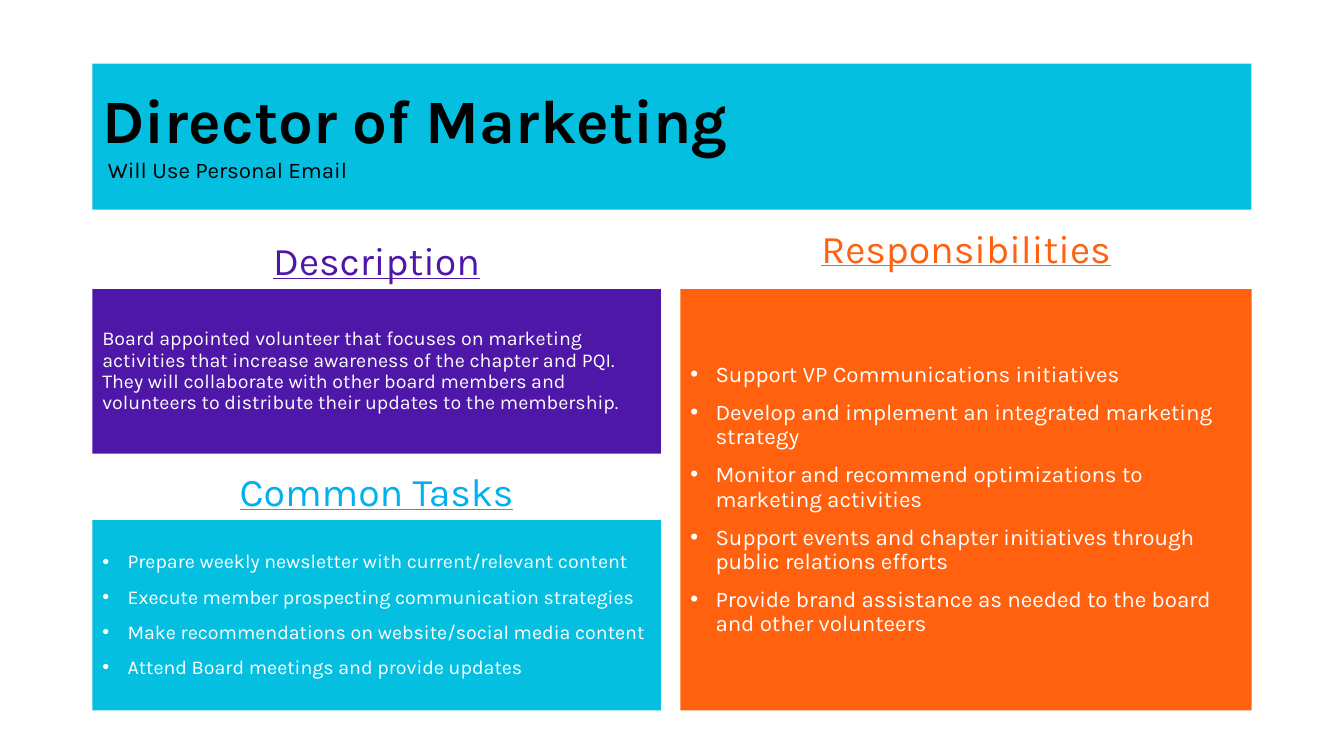
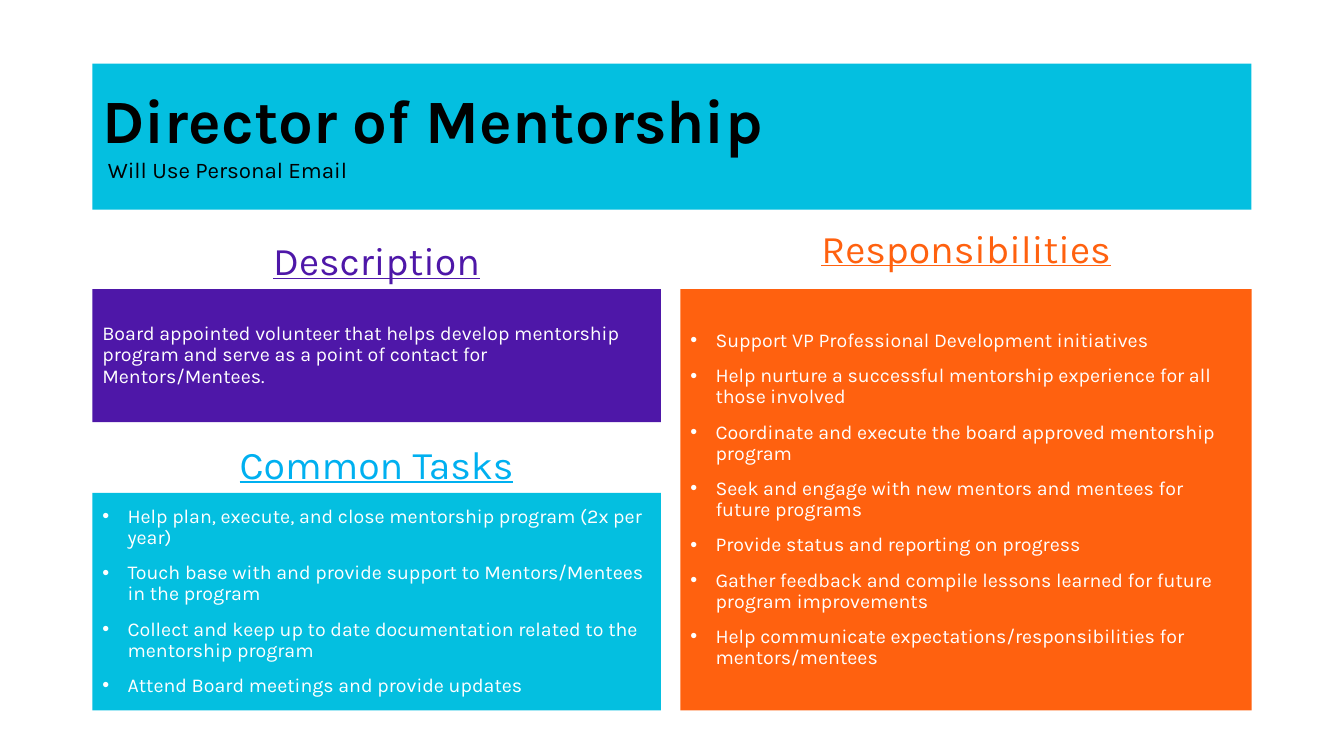
from pptx import Presentation
from pptx.dml.color import RGBColor
from pptx.enum.shapes import MSO_SHAPE
from pptx.enum.text import MSO_ANCHOR, PP_ALIGN
from pptx.util import Pt
from lxml.etree import SubElement
from pptx.oxml.ns import qn

COLORS = {
    "cyan": "04BFE0",
    "sky": "00B0F0",
    "purple": "4E17A8",
    "orange": "FF610F",
    "black": "000000",
    "white": "FFFFFF",
}
FONT = "Karla"
LEFT, WIDE = 66, 828
GAP = 14
LEFT_W, RIGHT_W = 406, 408
RIGHT = LEFT + LEFT_W + GAP
TOP, BOTTOM = 206.5, 507.5
HEAD_H = 46

ROLES = [
    {
        "title": "Director of Marketing",
        "about": "Board appointed volunteer that focuses on marketing activities that "
                 "increase awareness of the chapter and PQI. They will collaborate with "
                 "other board members and volunteers to distribute their updates to the "
                 "membership.",
        "about_h": 117.5,
        "tasks": [
            "Prepare weekly newsletter with current/relevant content",
            "Execute member prospecting communication strategies",
            "Make recommendations on website/social media content",
            "Attend Board meetings and provide updates",
        ],
        "tasks_h": 136,
        "duties": [
            "Support VP Communications initiatives",
            "Develop and implement an integrated marketing strategy",
            "Monitor and recommend optimizations to marketing activities",
            "Support events and chapter initiatives through public relations efforts",
            "Provide brand assistance as needed to the board and other volunteers",
        ],
        "duty_size": 16,
    },
    {
        "title": "Director of Mentorship",
        "about": "Board appointed volunteer that helps develop mentorship program and "
                 "serve as a point of contact for Mentors/Mentees.",
        "about_h": 95,
        "tasks": [
            "Help plan, execute, and close mentorship program (2x per year)",
            "Touch base with and provide support to Mentors/Mentees in the program",
            "Collect and keep up to date documentation related to the mentorship program",
            "Attend Board meetings and provide updates",
        ],
        "tasks_h": 155.5,
        "duties": [
            "Support VP Professional Development initiatives",
            "Help nurture a successful mentorship experience for all those involved",
            "Coordinate and execute the board approved mentorship program",
            "Seek and engage with new mentors and mentees for future programs",
            "Provide status and reporting on progress",
            "Gather feedback and compile lessons learned for future program improvements",
            "Help communicate expectations/responsibilities for mentors/mentees",
        ],
        "duty_size": 14,
    },
]


def style(para, size, color, bold=False, line=0.9):
    para.line_spacing = line
    for run in para.runs:
        font = run.font
        font.name, font.size, font.bold = FONT, Pt(size), bold
        font.color.rgb = RGBColor.from_string(COLORS[color])


def indent(para, left, first=0):
    props = para._p.get_or_add_pPr()
    props.set("marL", str(Pt(left)))
    props.set("indent", str(Pt(first)))
    return props


def bullet(para):
    props = indent(para, 18, -18)
    SubElement(props, qn("a:buFont")).set("typeface", "Arial")
    SubElement(props, qn("a:buChar")).set("char", "•")


def block(slide, box, fill):
    """Add a plain filled rectangle and return its text frame."""
    shape = slide.shapes.add_shape(MSO_SHAPE.RECTANGLE, *map(Pt, box))
    shape.shadow.inherit = False
    shape.fill.solid()
    shape.fill.fore_color.rgb = RGBColor.from_string(COLORS[fill])
    shape.line.fill.background()
    frame = shape.text_frame
    frame.word_wrap = True
    frame.vertical_anchor = MSO_ANCHOR.MIDDLE
    return frame


def banner(slide, title, box):
    frame = block(slide, box, "cyan")
    frame.text = title + "\nWill Use Personal Email"
    head, note = frame.paragraphs
    head.alignment = note.alignment = PP_ALIGN.LEFT
    indent(note, 4)
    style(head, 44, "black", bold=True)
    style(note, 16, "black", line=1.0)


def heading(slide, text, box, color):
    frame = slide.shapes.add_textbox(*map(Pt, box)).text_frame
    frame.word_wrap = True
    frame.vertical_anchor = MSO_ANCHOR.BOTTOM
    frame.text = text
    para = frame.paragraphs[0]
    para.alignment = PP_ALIGN.CENTER
    style(para, 28, color)
    para.runs[0].font.underline = True


def panel(slide, title, lines, box, fill, ink, size=14, lift=0):
    """Fill a box with lines, bulleted if several, and set a heading above it."""
    left, top, width, _ = box
    heading(slide, title, (left, top - lift - HEAD_H, width, HEAD_H), ink)
    frame = block(slide, box, fill)
    frame.text = "\n".join(lines)
    for i, para in enumerate(frame.paragraphs):
        para.alignment = PP_ALIGN.LEFT
        if len(lines) > 1:
            bullet(para)
        if i:
            para.space_before = Pt(10)
        style(para, size, "white")


def role_slide(deck, role):
    slide = deck.slides.add_slide(deck.slide_layouts[6])
    banner(slide, role["title"], (LEFT, 45.4, WIDE, 104.4))
    panel(slide, "Description", [role["about"]],
          (LEFT, TOP, LEFT_W, role["about_h"]), "purple", "purple")
    panel(slide, "Responsibilities", role["duties"],
          (RIGHT, TOP, RIGHT_W, BOTTOM - TOP), "orange", "orange",
          role["duty_size"], lift=9)
    height = role["tasks_h"]
    panel(slide, "Common Tasks", role["tasks"],
          (LEFT, BOTTOM - height, LEFT_W, height), "cyan", "sky")


def main():
    deck = Presentation()
    deck.slide_width, deck.slide_height = Pt(960), Pt(540)
    for role in ROLES:
        role_slide(deck, role)
    deck.save("out.pptx")


if __name__ == "__main__":
    main()
